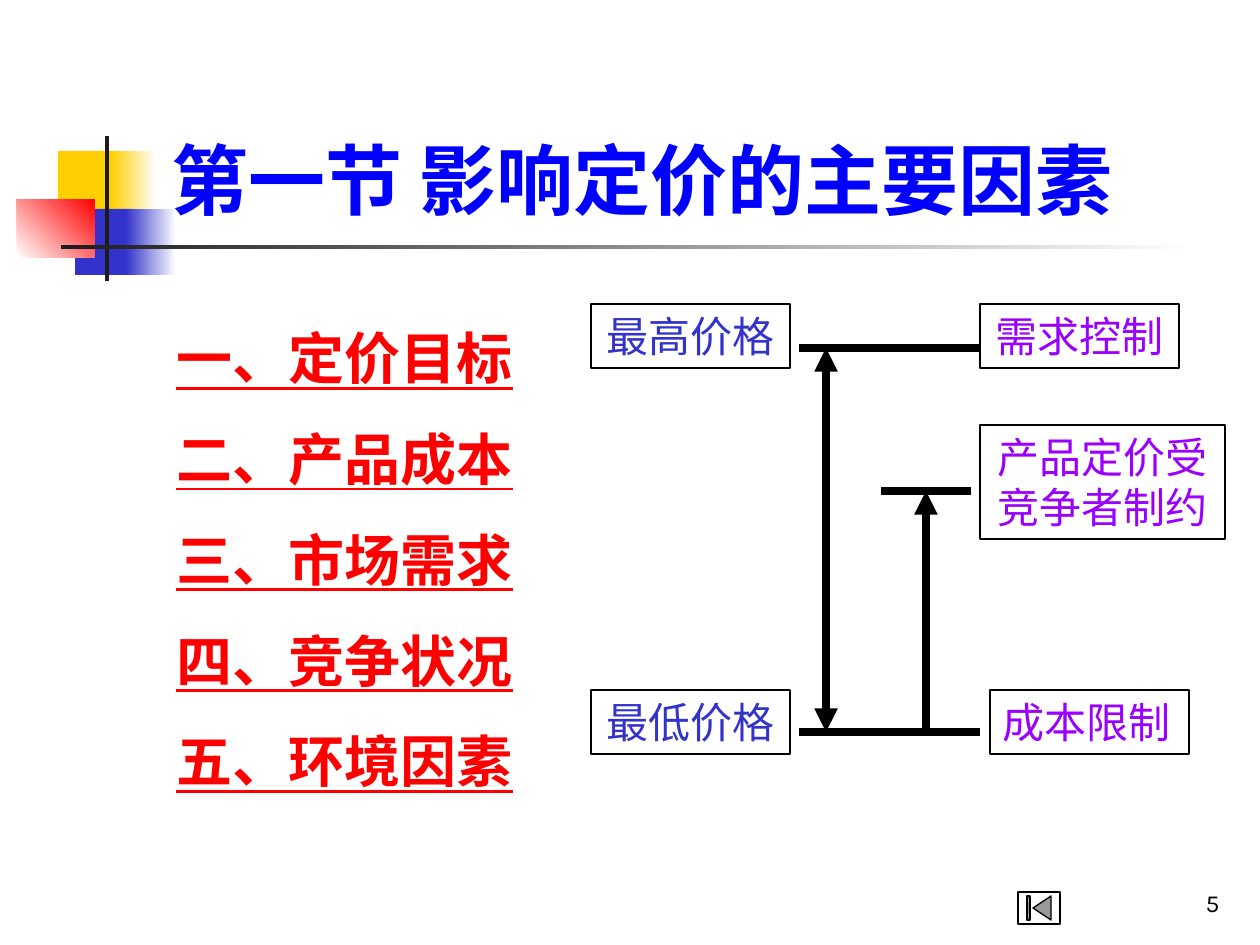
from lxml import etree
from pptx import Presentation
from pptx.dml.color import RGBColor
from pptx.enum.shapes import MSO_CONNECTOR, MSO_SHAPE
from pptx.enum.text import MSO_ANCHOR, PP_ALIGN
from pptx.oxml.ns import qn
from pptx.util import Pt

RECTANGLE = MSO_SHAPE.RECTANGLE
BUTTON = MSO_SHAPE.ACTION_BUTTON_BEGINNING
STRAIGHT = MSO_CONNECTOR.STRAIGHT
TOP, BOTTOM = MSO_ANCHOR.TOP, MSO_ANCHOR.BOTTOM
LEFT, CENTER, RIGHT = PP_ALIGN.LEFT, PP_ALIGN.CENTER, PP_ALIGN.RIGHT
PX = 914400 / 126
color = RGBColor.from_string


def place(left, top, width, height):
    return [round(value * PX) for value in (left, top, width, height)]


def write(box, text, font, size, hue, align=LEFT, anchor=TOP, bold=False):
    frame = box.text_frame
    frame.word_wrap = True
    frame.vertical_anchor = anchor
    frame.text = text
    for para in frame.paragraphs:
        para.alignment = align
        for span in para.runs:
            span.font.name = font
            span.font.size = Pt(size)
            span.font.bold = bold
            span.font.color.rgb = color(hue)
    return frame


deck = Presentation()
deck.slide_width, deck.slide_height = place(0, 0, 1260, 945)[2:]
page = deck.slides.add_slide(deck.slide_layouts[6])
shapes = page.shapes

# Ornament beside the title: one colour is solid, two make a gradient
ornament = [
    ((58, 151, 60, 66), ["FFCF01"], 0),
    ((111, 151, 45, 66), ["FFCF01", "FFFFFF"], 0),
    ((75, 209, 58, 66), ["3333CC"], 0),
    ((126, 209, 50, 66), ["3333CC", "FFFFFF"], 0),
    ((17, 199, 78, 59), ["FFFFFF", "FF0000"], 45),
    ((105, 136, 4, 145), ["1C1C1C"], 0),
    ((61, 245, 1134, 4), ["1C1C1C", "FFFFFF"], 0),
]
for area, hues, angle in ornament:
    block = shapes.add_shape(RECTANGLE, *place(*area))
    block.shadow.inherit = False
    block.line.fill.background()
    if len(hues) == 1:
        block.fill.solid()
        block.fill.fore_color.rgb = color(hues[0])
    else:
        block.fill.gradient()
        block.fill.gradient_angle = angle
        for stop, hue in zip(block.fill.gradient_stops, hues):
            stop.color.rgb = color(hue)

# Page number and title
number = shapes.add_textbox(*place(970, 861, 262, 63))
write(number, "5", "Karla", 14, "000000", RIGHT, BOTTOM)
title = shapes.add_textbox(*place(159, 29, 1074, 202))
frame = write(title, "第一节 影响定价的主要因素", "Noto Sans CJK SC", 44, "0000FF",
              anchor=BOTTOM, bold=True)
properties = frame.paragraphs[0].runs[0].font._element
etree.SubElement(properties, qn("a:ea")).set("typeface", "Noto Sans CJK SC")

# List of factors
factors = ["一、定价目标", "二、产品成本", "三、市场需求", "四、竞争状况", "五、环境因素"]
body = shapes.add_textbox(*place(164, 284, 427, 546))
frame = write(body, "\n".join(factors), "Karla", 32, "FF0000", bold=True)
hanging = round(48 * PX)
for para in frame.paragraphs:
    para.line_spacing = 1.5
    para.runs[0].font.underline = True
    para._p.get_or_add_pPr().set("marL", str(hanging))
    para._p.get_or_add_pPr().set("indent", str(-hanging))

# Button
button = shapes.add_shape(BUTTON, *place(1018, 892, 42, 32))
button.shadow.inherit = False
button.fill.solid()
button.fill.fore_color.rgb = color("FFFFFF")
button.line.color.rgb = color("000000")
button.line.width = Pt(0.75)

# Price range: limits and arrows
HIGH, MIDDLE, LOW = 348, 491, 732
lines = [
    ((799, HIGH, 980, HIGH), []),
    ((799, LOW, 980, LOW), []),
    ((826, HIGH, 826, LOW), ["a:headEnd", "a:tailEnd"]),
    ((881, MIDDLE, 971, MIDDLE), []),
    ((926, LOW, 926, MIDDLE), ["a:tailEnd"]),
]
for ends, arrowheads in lines:
    line = shapes.add_connector(STRAIGHT, *place(*ends))
    line.line.color.rgb = color("000000")
    line.line.width = Pt(4.5)
    for arrowhead in arrowheads:
        etree.SubElement(line.line._ln, qn(arrowhead)).set("type", "triangle")
    etree.SubElement(line._element.spPr, qn("a:effectLst"))

# Price range: labels
labels = [
    ("最高价格", (591, 304, 199, 64), "3333CC", CENTER),
    ("最低价格", (591, 690, 199, 64), "3333CC", CENTER),
    ("需求控制", (980, 304, 199, 64), "9900FF", CENTER),
    ("成本限制", (990, 690, 199, 64), "9900FF", LEFT),
    ("产品定价受竞争者制约", (980, 425, 245, 114), "9900FF", CENTER),
]
for text, area, hue, align in labels:
    label = shapes.add_shape(RECTANGLE, *place(*area))
    label.shadow.inherit = False
    label.fill.background()
    label.line.color.rgb = color("000000")
    label.line.width = Pt(0.75)
    write(label, text, "Times New Roman", 24, hue, align)

deck.save("out.pptx")
